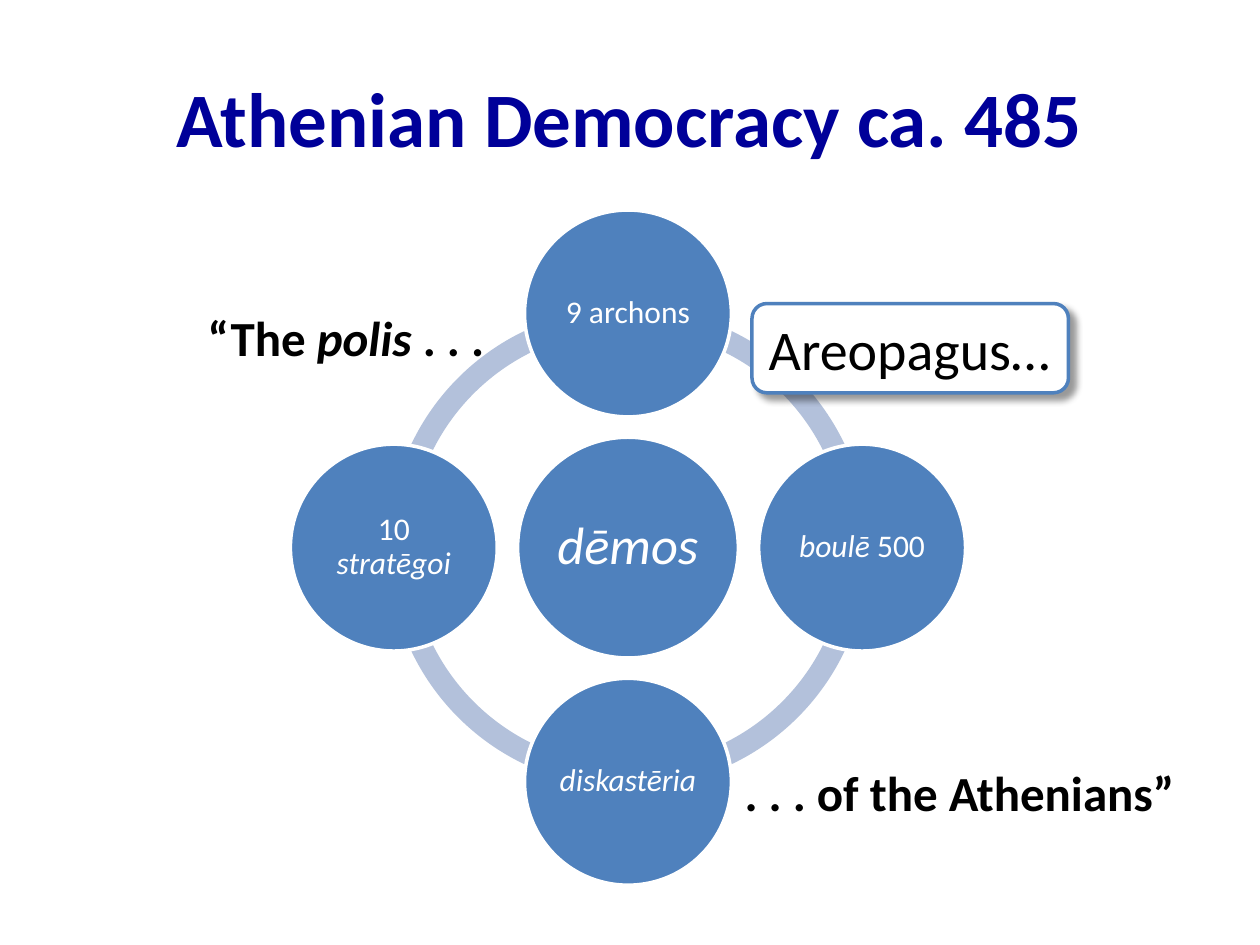
from lxml import etree
from pptx import Presentation
from pptx.dml.color import RGBColor
from pptx.enum import shapes, text
from pptx.oxml import ns
from pptx.util import Cm, Pt

COLORS = {
    "title": "000099",
    "circle": "4F81BD",
    "ring": "B3C1DB",
    "white": "FFFFFF",
    "black": "000000",
}


def paint(shape, fill, line=None):
    shape.shadow.inherit = False
    shape.fill.solid()
    shape.fill.fore_color.rgb = RGBColor.from_string(COLORS[fill])
    if line:
        shape.line.color.rgb = RGBColor.from_string(COLORS[line])
        shape.line.width = Pt(2)
    else:
        shape.line.fill.background()


def write(frame, runs, size, color, align, bold=False):
    """Fill the first paragraph from (words, italic) pairs."""
    frame.vertical_anchor = text.MSO_ANCHOR.MIDDLE
    paragraph = frame.paragraphs[0]
    paragraph.alignment = align
    font = paragraph.font
    font.name, font.size, font.bold = "Calibri", Pt(size), bold
    font.color.rgb = RGBColor.from_string(COLORS[color])
    for words, italic in runs:
        run = paragraph.add_run()
        run.text = words
        if italic:
            run.font.italic = True
    return paragraph


prs = Presentation()
prs.slide_width, prs.slide_height = Cm(25.4), Cm(19.05)
slide = prs.slides.add_slide(prs.slide_layouts[5])
LEFT, CENTER, RIGHT = text.PP_ALIGN.LEFT, text.PP_ALIGN.CENTER, text.PP_ALIGN.RIGHT

title = slide.shapes.title
title.left, title.top, title.width, title.height = Cm(1.27), Cm(0.76), Cm(22.86), Cm(3.18)
write(title.text_frame, [("Athenian Democracy ca. 485", False)], 44, "title", CENTER, True)

# Ring of four quarter arcs; arc angles count in units of 1/0.6 degree
diagram = slide.shapes.add_group_shape()
center_x, center_y = 12.66, 11.04
ring_size = 9.68
for start, end in [(108, 162), (54, 108), (0, 54), (162, 0)]:
    arc = diagram.shapes.add_shape(
        shapes.MSO_SHAPE.BLOCK_ARC,
        Cm(center_x - ring_size / 2), Cm(center_y - ring_size / 2),
        Cm(ring_size), Cm(ring_size))
    for i, value in enumerate((start, end, 0.046)):
        arc.adjustments[i] = value
    paint(arc, "ring")

# The people in the middle, the offices around them: direction, size, font size, words
orbit = 4.72
bodies = [
    (0, 0, 4.45, 30, [("dēmos", True)]),
    (0, -1, 4.17, 18, [("9 archons", False)]),
    (1, 0, 4.17, 18, [("boulē", True), (" 500", False)]),
    (0, 1, 4.17, 18, [("diskastēria", True)]),
    (-1, 0, 4.17, 18, [("10 ", False), ("stratēgoi", True)]),
]
for dx, dy, size, font_size, runs in bodies:
    circle = diagram.shapes.add_shape(
        shapes.MSO_SHAPE.OVAL,
        Cm(center_x + dx * orbit - size / 2), Cm(center_y + dy * orbit - size / 2),
        Cm(size), Cm(size))
    paint(circle, "circle", "white")
    frame = circle.text_frame
    frame.word_wrap = True
    frame.margin_left = frame.margin_right = Cm(0.08)
    frame.margin_top = frame.margin_bottom = Cm(0.08)
    write(frame, runs, font_size, "white", CENTER).line_spacing = 0.9

# The two halves of the quotation
quotation = [
    (3.86, 6.07, 6.15, RIGHT, [("“The ", False), ("polis", True), (" .\u00a0.\u00a0.", False)]),
    (14.76, 15.24, 9.63, LEFT, [(".\u00a0.\u00a0. of the Athenians”", False)]),
]
for left, top, width, align, runs in quotation:
    phrase = slide.shapes.add_textbox(Cm(left), Cm(top), Cm(width), Cm(1.45))
    phrase.text_frame.word_wrap = False
    write(phrase.text_frame, runs, 28, "black", align, True)

areopagus = slide.shapes.add_shape(
    shapes.MSO_SHAPE.ROUNDED_RECTANGLE, Cm(15.16), Cm(6.12), Cm(6.38), Cm(1.8))
paint(areopagus, "white", "circle")
areopagus.text_frame.word_wrap = False
write(areopagus.text_frame, [("Areopagus…", False)], 32, "black", LEFT)
effects = areopagus._element.spPr.find(ns.qn("a:effectLst"))
shadow = etree.SubElement(
    effects, ns.qn("a:outerShdw"), blurRad=str(Pt(4)), dist=str(Pt(5)),
    dir=str(45 * 60000), algn="tl", rotWithShape="0")
shade = etree.SubElement(shadow, ns.qn("a:srgbClr"), val=COLORS["black"])
etree.SubElement(shade, ns.qn("a:alpha"), val="40000")

prs.save("out.pptx")
